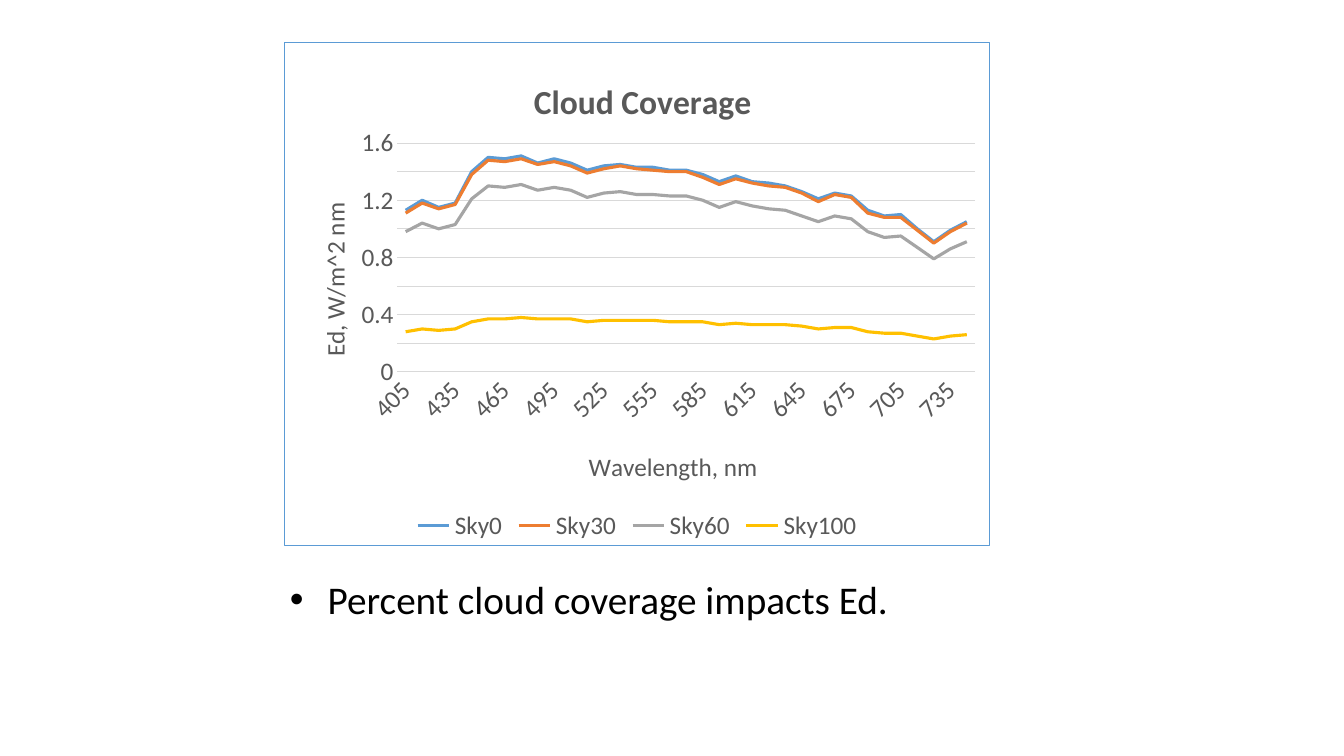
from lxml import etree
from pptx import Presentation
from pptx import util as u
from pptx.chart import data
from pptx.dml import color
from pptx.enum import chart as kinds
from pptx.oxml import ns, parse_xml

WAVELENGTHS = [str(nm) for nm in range(405, 746, 10)]
SKIES = {
    "Sky0": ("5B9BD5", [
        1.13, 1.2, 1.15, 1.18, 1.4, 1.5, 1.49, 1.51, 1.46, 1.49, 1.46, 1.41,
        1.44, 1.45, 1.43, 1.43, 1.41, 1.41, 1.38, 1.33, 1.37, 1.33, 1.32, 1.3,
        1.26, 1.21, 1.25, 1.23, 1.13, 1.09, 1.1, 1, 0.91, 0.99, 1.05]),
    "Sky30": ("ED7D31", [
        1.11, 1.18, 1.14, 1.17, 1.38, 1.48, 1.47, 1.49, 1.45, 1.47, 1.44, 1.39,
        1.42, 1.44, 1.42, 1.41, 1.4, 1.4, 1.36, 1.31, 1.35, 1.32, 1.3, 1.29,
        1.25, 1.19, 1.24, 1.22, 1.11, 1.08, 1.08, 0.99, 0.9, 0.98, 1.04]),
    "Sky60": ("A5A5A5", [
        0.98, 1.04, 1, 1.03, 1.21, 1.3, 1.29, 1.31, 1.27, 1.29, 1.27, 1.22,
        1.25, 1.26, 1.24, 1.24, 1.23, 1.23, 1.2, 1.15, 1.19, 1.16, 1.14, 1.13,
        1.09, 1.05, 1.09, 1.07, 0.98, 0.94, 0.95, 0.87, 0.79, 0.86, 0.91]),
    "Sky100": ("FFC000", [
        0.28, 0.3, 0.29, 0.3, 0.35, 0.37, 0.37, 0.38, 0.37, 0.37, 0.37, 0.35,
        0.36, 0.36, 0.36, 0.36, 0.35, 0.35, 0.35, 0.33, 0.34, 0.33, 0.33, 0.33,
        0.32, 0.3, 0.31, 0.31, 0.28, 0.27, 0.27, 0.25, 0.23, 0.25, 0.26]),
}


def rgb(code):
    return color.RGBColor.from_string(code)


def assign(target, values):
    for name, value in values.items():
        setattr(target, name, value)


def make(tag, **attributes):
    node = parse_xml(f"<{tag} {ns.nsdecls('c', 'a')}/>")
    for name, value in attributes.items():
        node.set(name, str(value))
    return node


class CloudPage:
    face = "Calibri"
    ink = "000000"
    grey = "595959"
    rule = "D9D9D9"
    frame = "5B9BD5"

    def __init__(self, deck):
        self.page = deck.slides.add_slide(deck.slide_layouts[6])

    def font(self, font, size, code, bold=False):
        assign(font, {"name": self.face, "size": u.Pt(size), "bold": bold})
        font.color.rgb = rgb(code)

    def line(self, line, code, width):
        line.color.rgb = rgb(code)
        line.width = u.Pt(width)

    def place(self, element, **fractions):
        layout = element.find(ns.qn("c:layout"))
        if layout is None:
            layout = make("c:layout")
            element.insert(len(element.findall(ns.qn("c:tx"))), layout)
        manual = etree.SubElement(layout, ns.qn("c:manualLayout"))
        modes = {"xMode": "edge", "yMode": "edge"}
        if "w" in fractions:
            modes = {"layoutTarget": "inner", **modes}
        for name, value in {**modes, **fractions}.items():
            manual.append(make(f"c:{name}", val=value))

    def title(self, title, words, size, bold, x, y, turn=0):
        frame = title.text_frame
        frame.text = words
        para = frame.paragraphs[0]
        self.font(para.runs[0].font, size, self.grey, bold)
        body = frame._txBody.find(ns.qn("a:bodyPr"))
        body.set("rot", str(turn))
        body.set("vert", "horz")
        self.place(frame._txBody.getparent().getparent(), x=x, y=y)

    def axis(self, axis, words, x, y, turn=0):
        assign(axis, {"major_tick_mark": kinds.XL_TICK_MARK.NONE,
                      "minor_tick_mark": kinds.XL_TICK_MARK.NONE})
        self.font(axis.tick_labels.font, 18, self.grey)
        self.title(axis.axis_title, words, 18, False, x, y, turn)

    def border(self, root):
        root.find(ns.qn("c:date1904")).addnext(make("c:roundedCorners", val=0))
        style = make("c:spPr")
        outline = etree.SubElement(style, ns.qn("a:ln"), w=str(u.Pt(0.75)))
        fill = etree.SubElement(outline, ns.qn("a:solidFill"))
        etree.SubElement(fill, ns.qn("a:srgbClr"), val=self.frame)
        root.find(ns.qn("c:chart")).addnext(style)

    def chart(self, left, top, width, height):
        table = data.CategoryChartData()
        table.categories = WAVELENGTHS
        for name, (code, values) in SKIES.items():
            table.add_series(name, values)
        chart = self.page.shapes.add_chart(
            kinds.XL_CHART_TYPE.LINE, u.Pt(left), u.Pt(top),
            u.Pt(width), u.Pt(height), table).chart
        root = chart._chartSpace
        self.font(chart.font, 18, self.ink)
        self.border(root)
        self.title(chart.chart_title, "Cloud Coverage", 24, True, 0.345, 0.06)

        chart.plots[0].vary_by_categories = False
        for series in chart.plots[0].series:
            series.smooth = False
            series.marker.style = kinds.XL_MARKER_STYLE.NONE
            self.line(series.format.line, SKIES[series.name][0], 2.25)

        bottom, side = chart.category_axis, chart.value_axis
        self.axis(bottom, "Wavelength, nm", 0.425, 0.8)
        self.line(bottom.format.line, self.rule, 0.75)
        scale = root.find(".//" + ns.qn("c:catAx"))
        labels = scale.find(ns.qn("c:txPr"))
        labels.find(ns.qn("a:bodyPr")).set("rot", "-2700000")
        scale.find(ns.qn("c:noMultiLvlLbl")).addprevious(
            make("c:tickLblSkip", val=3))

        self.axis(side, "Ed, W/m^2 nm", 0.04, 0.31, -5400000)
        assign(side, {"minimum_scale": 0, "maximum_scale": 1.6,
                      "major_unit": 0.2, "has_major_gridlines": True})
        side.format.line.fill.background()
        self.line(side.major_gridlines.format.line, self.rule, 0.75)

        chart.has_legend = True
        assign(chart.legend, {"position": kinds.XL_LEGEND_POSITION.BOTTOM,
                              "include_in_layout": False})
        self.font(chart.legend.font, 18, self.grey)
        self.place(root.find(".//" + ns.qn("c:plotArea")),
                   x=0.16, y=0.2, w=0.82, h=0.455)

    def bullet(self, words, left, top, width, height):
        box = self.page.shapes.add_textbox(
            u.Pt(left), u.Pt(top), u.Pt(width), u.Pt(height))
        box.text_frame.word_wrap = True
        para = box.text_frame.paragraphs[0]
        assign(para, {"line_spacing": 0.9, "space_before": u.Pt(10)})
        span = para.add_run()
        span.text = words
        self.font(span.font, 28, self.ink)
        style = para._p.get_or_add_pPr()
        style.set("marL", str(u.Pt(27)))
        style.set("indent", str(u.Pt(-27)))
        etree.SubElement(style, ns.qn("a:buFont"), typeface="Arial")
        etree.SubElement(style, ns.qn("a:buChar"), char="•")


def main():
    deck = Presentation()
    assign(deck, {"slide_width": u.Pt(960), "slide_height": u.Pt(540)})
    page = CloudPage(deck)
    page.bullet("Percent cloud coverage impacts Ed.", 200, 411, 720, 104)
    page.chart(203, 30, 504, 360)
    deck.save("out.pptx")


if __name__ == "__main__":
    main()
